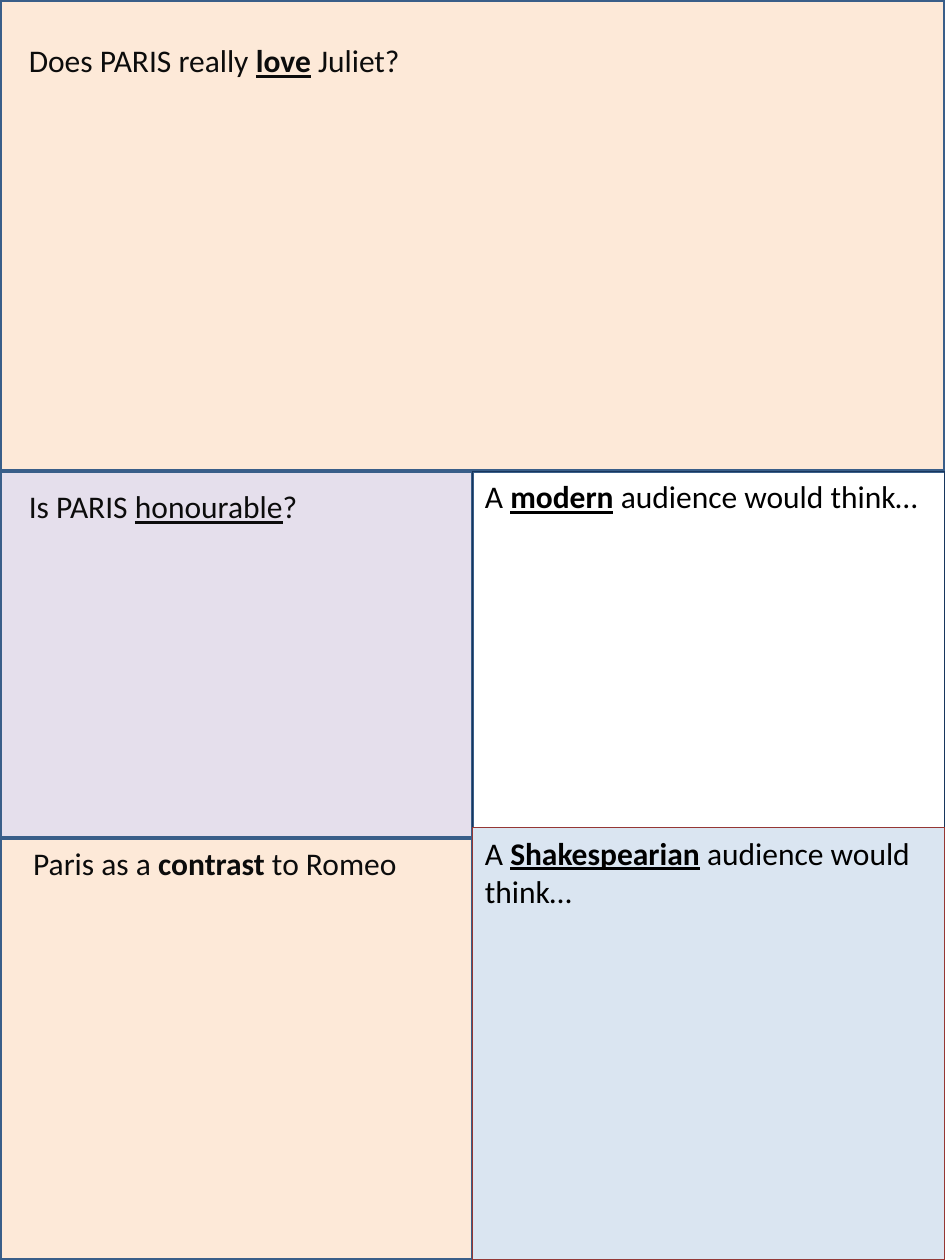
from dataclasses import dataclass
from pptx import Presentation
from pptx.dml.color import RGBColor as RGB
from pptx.enum.shapes import MSO_SHAPE as Kind
from pptx.enum.text import MSO_ANCHOR as Anchor, MSO_AUTO_SIZE as Fit, PP_ALIGN as Align
from pptx.util import Pt


@dataclass(frozen=True)
class Theme:
    font: str = "Calibri"
    size: float = 18
    black: str = "000000"
    ink: str = "0C0C0C"
    peach: str = "FDE9D8"
    lilac: str = "E5DFEC"
    sky: str = "DAE5F1"
    blue: str = "395E89"
    navy: str = "17365D"
    red: str = "953734"
    thick: float = 2
    thin: float = 0.75


T = Theme()
WIDE, HIGH = 540, 720
MID = WIDE / 2
TOP, LEFT, RIGHT = 269.28, 478.8, 473.04
EDGE = 9.36
ROW = 28.8

LOVE = [("Does PARIS really ", ""), ("love", "bu"), (" Juliet?", "")]
HONOUR = [("Is PARIS ", ""), ("honourable", "u"), ("?", "")]
ROMEO = [("Paris as a ", ""), ("contrast", "b"), (" to Romeo", "")]
MODERN = [("A ", ""), ("modern", "bu"), (" audience would think…", "")]
OLD = [("A ", ""), ("Shakespearian", "bu"), (" audience would think…", "")]

PANELS = [
    (Kind.RECTANGLE, 0, 0, WIDE, TOP, T.peach, T.blue, T.thick, None),
    (Kind.FLOWCHART_PROCESS, 0, TOP, MID, LEFT, T.lilac, T.blue, T.thick, None),
    (Kind.RECTANGLE, 0, LEFT, MID, HIGH, T.peach, T.blue, T.thick, None),
    (Kind.RECTANGLE, MID, TOP, WIDE, RIGHT, None, T.navy, T.thin, MODERN),
    (Kind.RECTANGLE, MID, RIGHT, WIDE, HIGH, T.sky, T.red, T.thin, OLD),
]
LABELS = [
    (20.16, 339.84, Align.LEFT, LOVE),
    (275.04, 181.44, Align.LEFT, HONOUR),
    (LEFT, 226.8, Align.CENTER, ROMEO),
]


def write(shape, runs, ink, align=Align.LEFT):
    frame = shape.text_frame
    frame.word_wrap = True
    frame.auto_size = Fit.SHAPE_TO_FIT_TEXT
    frame.vertical_anchor = Anchor.TOP
    para = frame.paragraphs[0]
    para.alignment = align
    for words, style in runs:
        run = para.add_run()
        run.text = words
        font = run.font
        font.name, font.size = T.font, Pt(T.size)
        font.bold, font.underline = "b" in style, "u" in style
        font.color.rgb = RGB.from_string(ink)


def panel(slide, kind, x, y, right, low, fill, line, width, runs):
    shape = slide.shapes.add_shape(kind, Pt(x), Pt(y), Pt(right - x), Pt(low - y))
    shape.shadow.inherit = False
    if fill:
        shape.fill.solid()
        shape.fill.fore_color.rgb = RGB.from_string(fill)
    else:
        shape.fill.background()
    shape.line.color.rgb = RGB.from_string(line)
    shape.line.width = Pt(width)
    if runs:
        write(shape, runs, T.black)


def main():
    deck = Presentation()
    deck.slide_width, deck.slide_height = Pt(WIDE), Pt(HIGH)
    slide = deck.slides.add_slide(deck.slide_layouts[6])
    for item in PANELS:
        panel(slide, *item)
    for y, width, align, runs in LABELS:
        box = slide.shapes.add_textbox(Pt(EDGE), Pt(y), Pt(width), Pt(ROW))
        write(box, runs, T.ink, align)
    deck.save("out.pptx")


if __name__ == "__main__":
    main()
